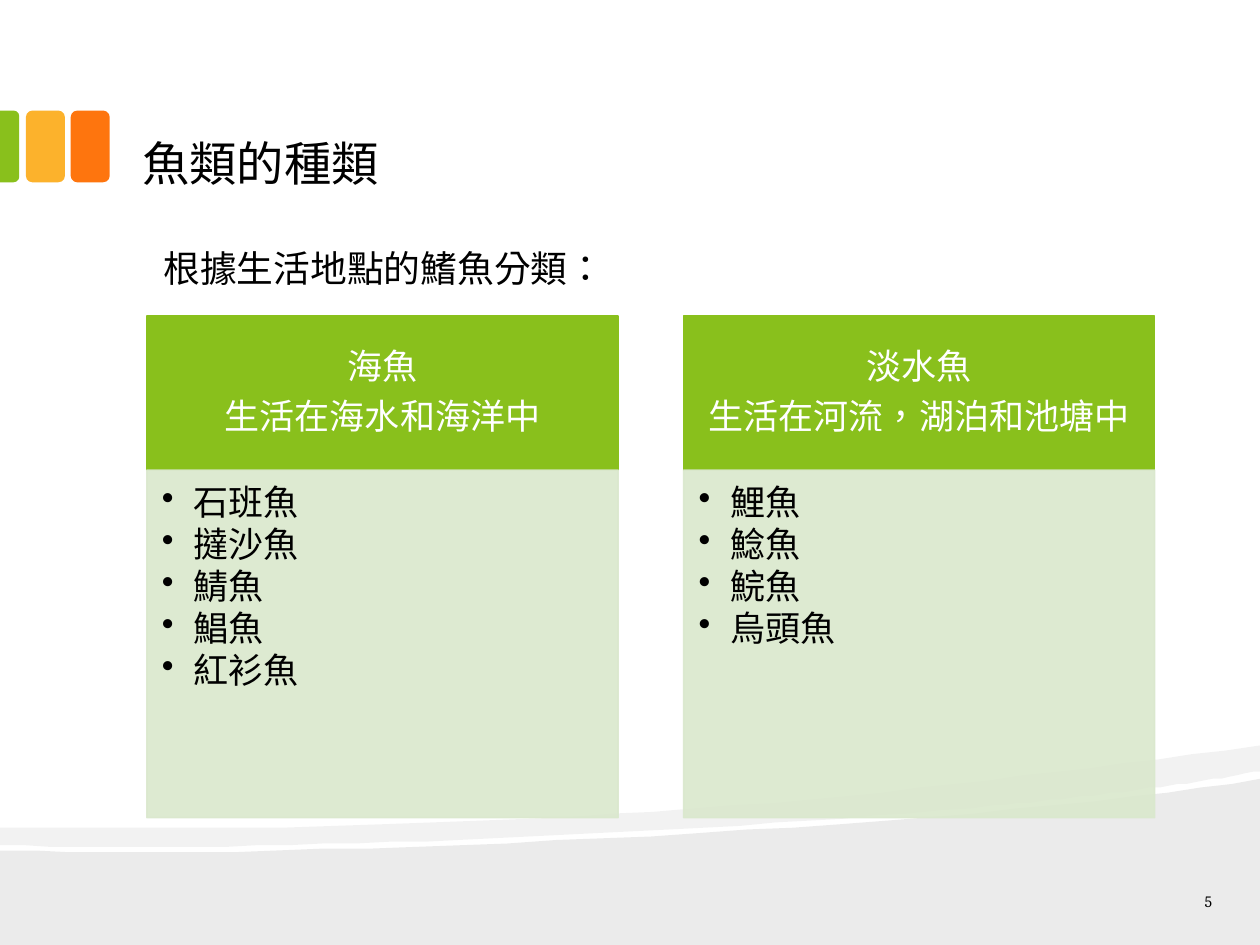
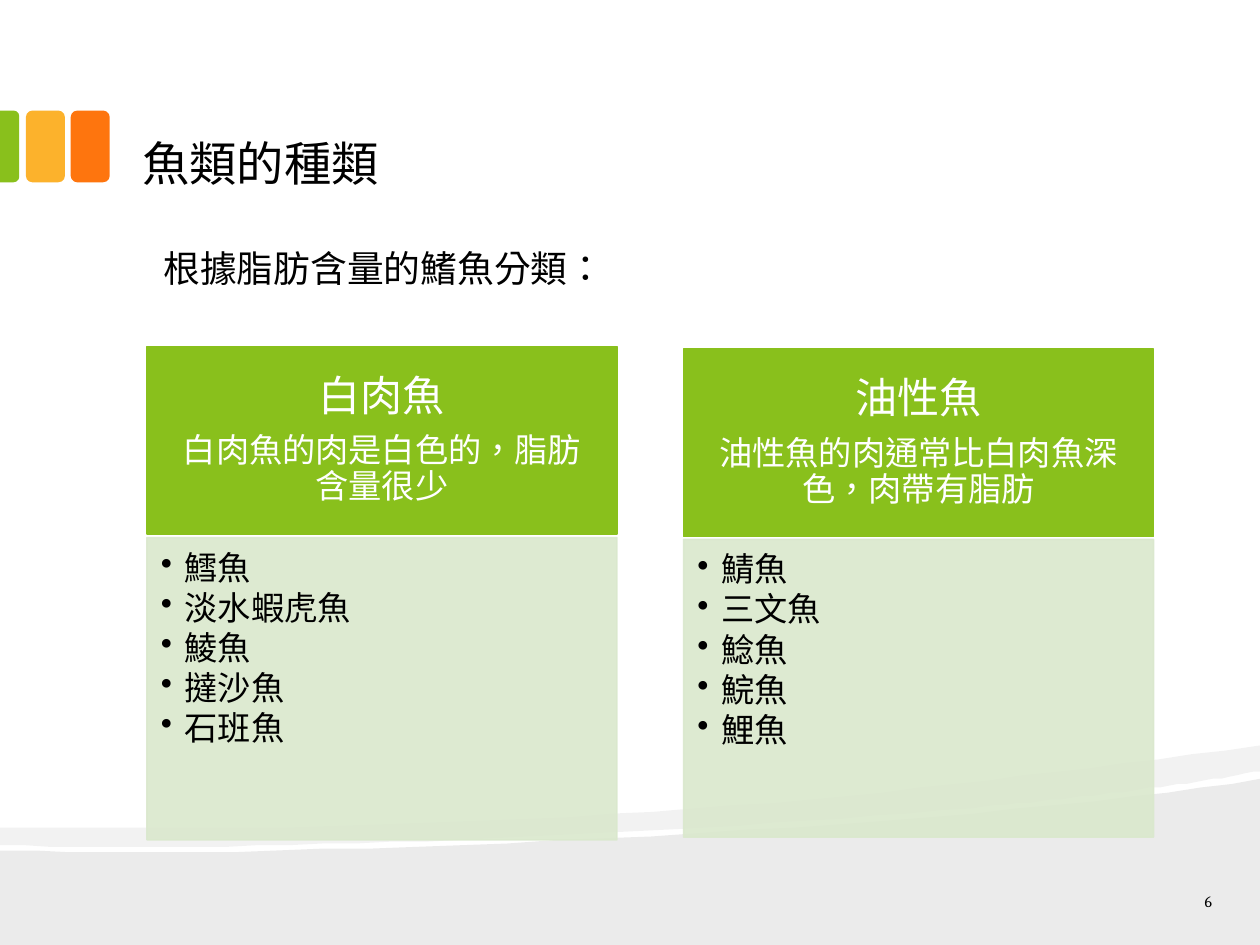
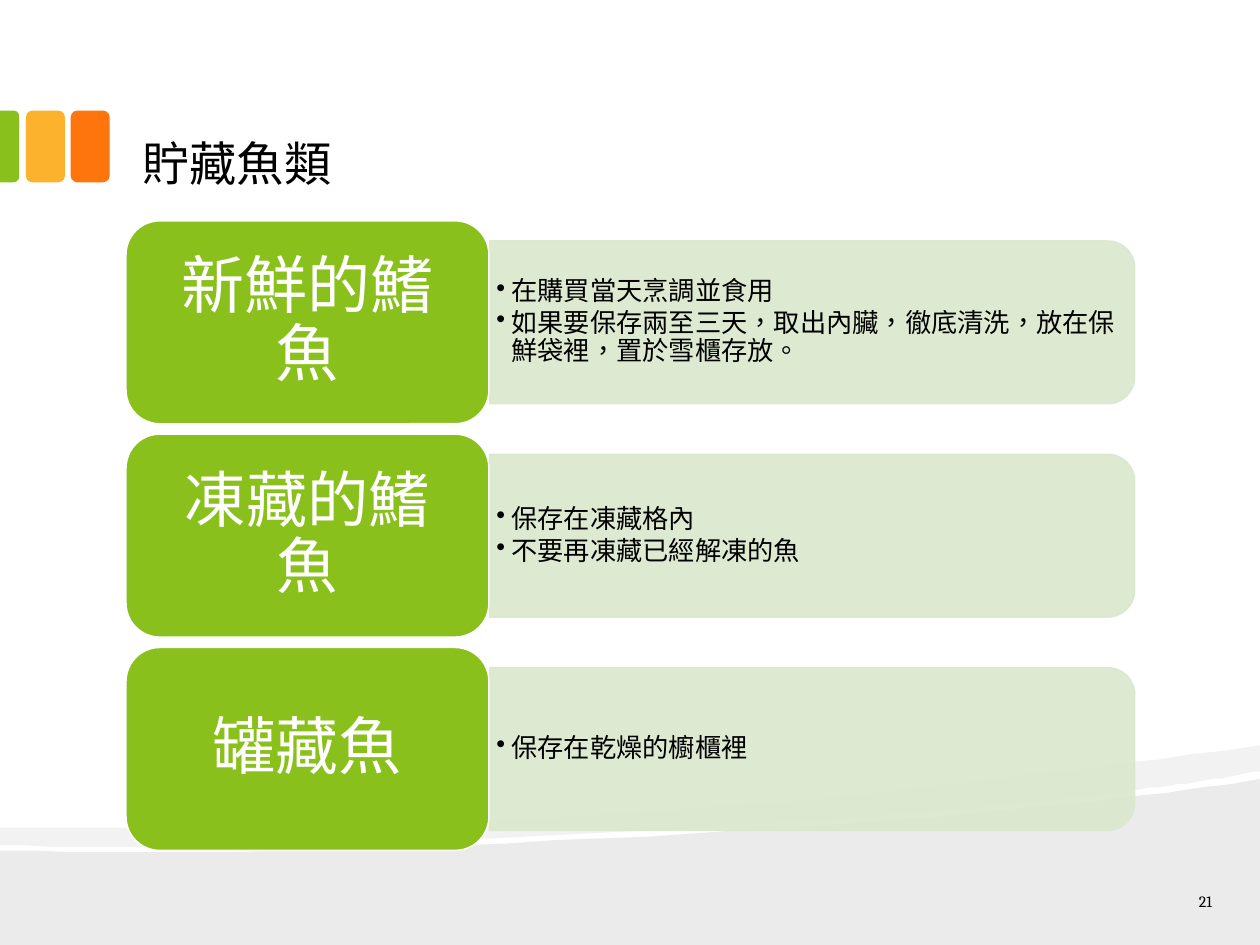
from lxml.etree import SubElement
from pptx import Presentation
from pptx.dml.color import RGBColor
from pptx.enum.lang import MSO_LANGUAGE_ID as Language
from pptx.enum.shapes import MSO_SHAPE as Preset
from pptx.enum.text import MSO_ANCHOR as Anchor, PP_ALIGN as Align
from pptx.oxml.ns import qn
from pptx.util import Pt

FONT = "Cambria"
GREEN, YELLOW, ORANGE = "89C01C", "FCB22C", "FE750E"
PALE, WHITE, BLACK = "DAE8CD", "FFFFFF", "000000"
LABEL_GAP, BULLET_GAP = 0.33, 0.125  # space after, as a share of the text size


def paint(shape, fill, line=None, opacity=100):
    shape.shadow.inherit = False
    shape.fill.solid()
    shape.fill.fore_color.rgb = RGBColor.from_string(fill)
    if line:
        shape.line.color.rgb = RGBColor.from_string(line)
        shape.line.width = Pt(0.85)
    else:
        shape.line.fill.background()
    if opacity < 100:
        for colour in shape._element.iter(qn("a:srgbClr")):
            SubElement(colour, qn("a:alpha"), val=str(opacity * 1000))


def write(shape, lines, margins=(9.4, 5, 9.4, 5), colour=BLACK, align=Align.LEFT,
          anchor=Anchor.TOP, spacing=0.9, before=0, gap=0, indent=0):
    """Fill a shape with (text, size) lines; an indent makes them bullets."""
    frame = shape.text_frame
    frame.word_wrap = True
    frame.vertical_anchor = anchor
    (frame.margin_left, frame.margin_top,
     frame.margin_right, frame.margin_bottom) = [Pt(margin) for margin in margins]
    for index, (text, size) in enumerate(lines):
        paragraph = frame.paragraphs[0] if index == 0 else frame.add_paragraph()
        paragraph.text = text
        if indent:
            properties = paragraph._p.get_or_add_pPr()
            properties.set("marL", str(Pt(indent)))
            properties.set("indent", str(-Pt(indent)))
            SubElement(properties, qn("a:buChar"), char="•")
        paragraph.alignment = align
        paragraph.line_spacing = spacing
        paragraph.space_before = Pt(before)
        paragraph.space_after = Pt(size * gap)
        paragraph.font.name = FONT
        paragraph.font.size = Pt(size)
        paragraph.font.color.rgb = RGBColor.from_string(colour)
        paragraph.font.language_id = Language.TRADITIONAL_CHINESE


presentation = Presentation()
presentation.slide_width, presentation.slide_height = Pt(720), Pt(540)

# Each wave: opacity, Bezier curves, then the corners that close it
waves = [
    (8, [((0, 486), (190, 491.8), (563, 471.6), (720, 445))], [(720, 540), (0, 540)]),
    (5, [((0, 473), (352, 476.6), (524.2, 451.4), (720, 426.2)),
         ((720, 440.6), (678.2, 448.6), (620.6, 455.8), (555.8, 461.5)),
         ((555.8, 461.5), (376.6, 477.4), (139, 487.4), (0, 483.1))], []),
]
outlines = []
for opacity, curves, corners in waves:
    points = []
    for curve in curves:
        for step in range(31):
            t = step / 30
            weights = ((1 - t) ** 3, 3 * t * (1 - t) ** 2, 3 * t * t * (1 - t), t ** 3)
            points.append([sum(weight * point[axis] for weight, point in zip(weights, curve))
                           for axis in (0, 1)])
    outlines.append((opacity, points + corners))

# What all slides share: waves, tabs, title and page number
slides = []
for title, number in [("魚類的種類", "5"), ("魚類的種類", "6"), ("貯藏魚類", "21")]:
    slide = presentation.slides.add_slide(presentation.slide_layouts[6])
    slides.append(slide)
    for opacity, points in outlines:
        builder = slide.shapes.build_freeform(*points[0], scale=Pt(1))
        builder.add_line_segments(points[1:], close=True)
        paint(builder.convert_to_shape(), BLACK, opacity=opacity)
    for left, colour in [(40.4, ORANGE), (14.8, YELLOW)]:
        tab = slide.shapes.add_shape(Preset.ROUNDED_RECTANGLE,
                                     Pt(left), Pt(63.2), Pt(22.3), Pt(41))
        paint(tab, colour)
    tab = slide.shapes.add_shape(Preset.ROUND_2_SAME_RECTANGLE,
                                 Pt(-15), Pt(78.2), Pt(41), Pt(11))
    tab.rotation = 90
    tab.adjustments[0] = 0.292
    paint(tab, GREEN)
    heading = slide.shapes.add_textbox(Pt(72), Pt(12.2), Pt(576), Pt(102.2))
    write(heading, [(title, 27)], anchor=Anchor.BOTTOM, spacing=1)
    page = slide.shapes.add_textbox(Pt(653.8), Pt(507.6), Pt(48.2), Pt(14.4))
    write(page, [(number, 9)], align=Align.RIGHT, anchor=Anchor.MIDDLE, spacing=1)

# Slides 1 and 2: two columns, each a green head over a pale list
groupings = [
    ("根據生活地點的鰭魚分類：", 269.3, 87.8, (11.5, 6.5, 11.5, 6.5),
     20, (8.6, 8.6, 11.5, 12.2), 18, [
         (180.7, 268.6, 198.7, [("海魚", 20), ("生活在海水和海洋中", 20)],
          ["石班魚", "撻沙魚", "鯖魚", "鯧魚", "紅衫魚"]),
         (180.7, 268.6, 198.7, [("淡水魚", 20), ("生活在河流，湖泊和池塘中", 20)],
          ["鯉魚", "鯰魚", "鯇魚", "烏頭魚"])]),
    ("根據脂肪含量的鰭魚分類：", 268.6, 107.3, (13.7, 7.9, 13.7, 7.9),
     19, (7.9, 7.9, 10.8, 12.2), 13.7, [
         (198, 307.2, 172.8, [("白肉魚", 24), ("白肉魚的肉是白色的，脂肪含量很少", 19)],
          ["鱈魚", "淡水蝦虎魚", "鯪魚", "撻沙魚", "石班魚"]),
         (199.4, 308.2, 170.2, [("油性魚", 24), ("油性魚的肉通常比白肉魚深色，肉帶有脂肪", 19)],
          ["鯖魚", "三文魚", "鯰魚", "鯇魚", "鯉魚"])]),
]
for slide, grouping in zip(slides, groupings):
    (intro, width, head_height, head_margins,
     list_size, list_margins, indent, columns) = grouping
    for column, (head_top, list_top, list_height, labels, fishes) in enumerate(columns):
        left = 84 + column * 306.6
        head = slide.shapes.add_shape(Preset.RECTANGLE, Pt(left), Pt(head_top),
                                      Pt(width), Pt(head_height))
        paint(head, GREEN, GREEN)
        write(head, labels, head_margins, WHITE, Align.CENTER, Anchor.MIDDLE, gap=LABEL_GAP)
        fish_list = slide.shapes.add_shape(Preset.RECTANGLE, Pt(left), Pt(list_top),
                                           Pt(width), Pt(list_height))
        paint(fish_list, PALE, PALE, 90)
        write(fish_list, [(fish, list_size) for fish in fishes], list_margins,
              gap=BULLET_GAP, indent=indent)
    intro_box = slide.shapes.add_textbox(Pt(84), Pt(138.2), Pt(576), Pt(360))
    write(intro_box, [(intro, 21)], before=13.5)

# Slide 3: one row for each way of storing fish
storage_rows = [
    ("新鮮的鰭魚", 36, ["在購買當天烹調並食用",
                   "如果要保存兩至三天，取出內臟，徹底清洗，放在保鮮袋裡，置於雪櫃存放。"]),
    ("凍藏的鰭魚", 35, ["保存在凍藏格內", "不要再凍藏已經解凍的魚"]),
    ("罐藏魚", 36, ["保存在乾燥的櫥櫃裡"]),
]
shapes = slides[2].shapes
for row, (label, label_size, advice) in enumerate(storage_rows):
    middle = 184.2 + row * 121.9
    panel = shapes.add_shape(Preset.ROUND_2_SAME_RECTANGLE,
                             Pt(417.6), Pt(middle - 184.3), Pt(93), Pt(368.6))
    panel.rotation = 90
    paint(panel, PALE, PALE, 90)
    advice_box = shapes.add_textbox(Pt(279.4), Pt(middle - 41.8), Pt(364.3), Pt(83.6))
    write(advice_box, [(text, 15) for text in advice], (4.3, 2.2, 4.3, 2.2),
          anchor=Anchor.MIDDLE, gap=BULLET_GAP, indent=8.6)
    card = shapes.add_shape(Preset.ROUNDED_RECTANGLE,
                            Pt(72), Pt(middle - 58), Pt(207.4), Pt(116))
    paint(card, GREEN, WHITE)
    write(card, [(label, label_size)], (10.8, 5, 10.8, 5), WHITE, Align.CENTER,
          Anchor.MIDDLE, gap=LABEL_GAP)

presentation.save("out.pptx")
